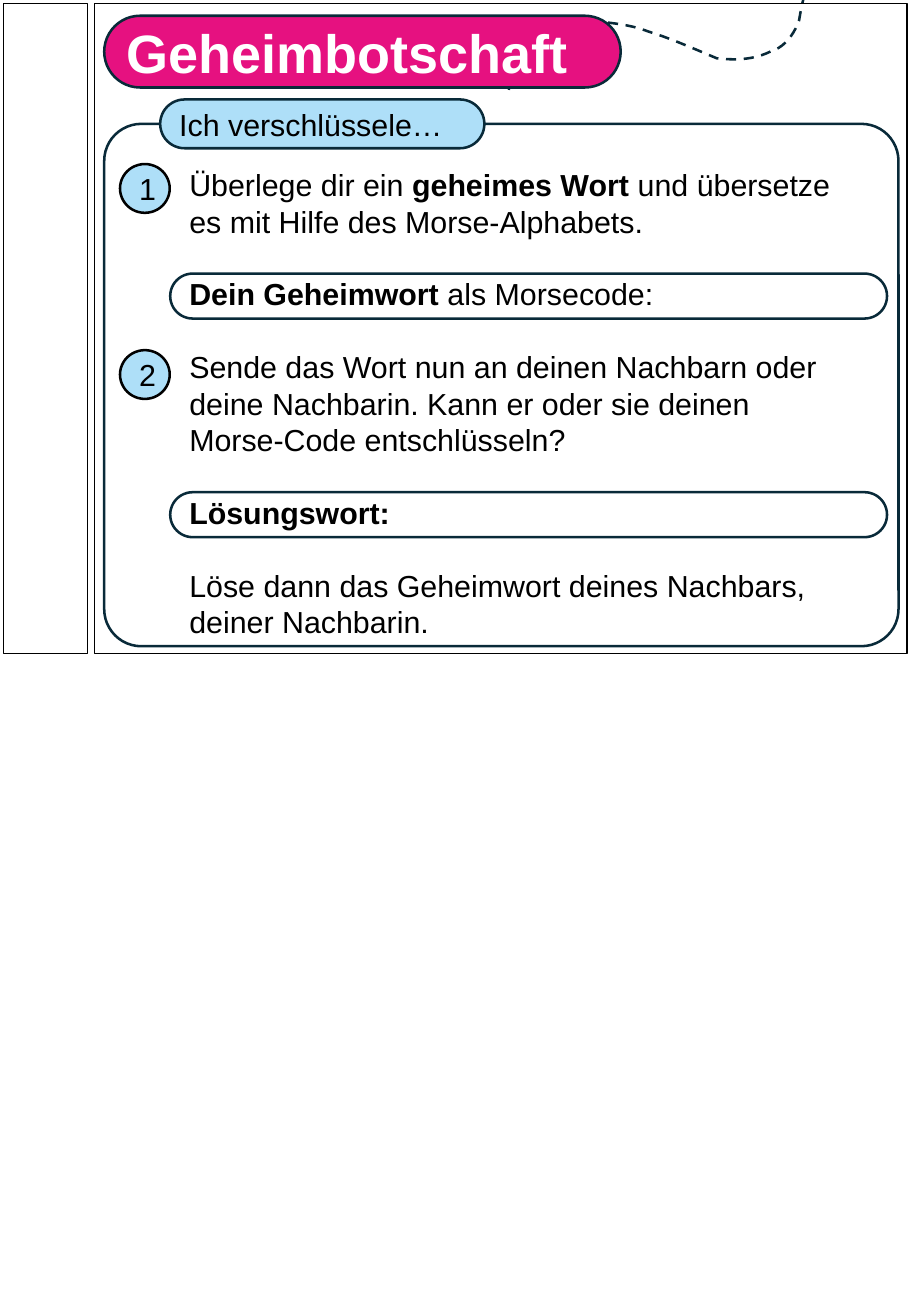
from dataclasses import dataclass

from pptx import Presentation
from pptx.dml.color import RGBColor as RGB
from pptx.enum.dml import MSO_LINE
from pptx.enum.shapes import MSO_SHAPE as SHAPE
from pptx.enum.text import MSO_ANCHOR as ANCHOR, MSO_AUTO_SIZE as AUTO, PP_ALIGN as ALIGN
from pptx.util import Cm, Pt


@dataclass(frozen=True)
class Theme:
    navy: RGB = RGB(0x09, 0x2A, 0x39)
    pink: RGB = RGB(0xE6, 0x11, 0x80)
    sky: RGB = RGB(0xAE, 0xDF, 0xF8)
    white: RGB = RGB(0xFF, 0xFF, 0xFF)
    black: RGB = RGB(0, 0, 0)
    font: str = "Arial"
    title: Pt = Pt(32)
    body: Pt = Pt(18)
    line_height: Pt = Pt(21.6)
    outline: Pt = Pt(1.5)
    hairline: Pt = Pt(0.75)


T = Theme()


def style(sp, fill=None, line=T.navy, width=T.outline):
    sp.shadow.inherit = False
    if fill is None:
        sp.fill.background()
    else:
        sp.fill.solid()
        sp.fill.fore_color.rgb = fill
    sp.line.color.rgb = line
    sp.line.width = width


def add_run(p, text, color=T.black, **fmt):
    r = p.add_run()
    r.text = text
    r.font.color.rgb = color
    for name, value in ({"name": T.font, "size": T.body, "bold": False} | fmt).items():
        setattr(r.font, name, value)


prs = Presentation()
prs.slide_width, prs.slide_height = Cm(19.05), Cm(27.51)
s = prs.slides.add_slide(prs.slide_layouts[6])

# Card and answer fields: box, corner, fill
for box, corner, fill in [
    ((2.18, 2.59, 16.61, 10.92), 0.071, T.white),
    ((3.56, 10.29, 14.99, 0.94), 0.5, None),
    ((3.56, 5.72, 14.99, 0.94), 0.5, None),
]:
    sp = s.shapes.add_shape(SHAPE.ROUNDED_RECTANGLE, *map(Cm, box))
    sp.adjustments[0] = corner
    style(sp, fill)

# Dashed trail: Bézier segments (two handles and an end point), sampled evenly
STEPS = 10
start = (10.64, 1.88)
trail = [
    ((10.72, 1.42), (10.95, 0.86), (11.18, 0.64)),
    ((11.43, 0.38), (11.68, 0.43), (12.07, 0.41)),
    ((12.42, 0.46), (13.06, 0.46), (13.56, 0.66)),
    ((14.05, 0.81), (14.63, 1.07), (14.99, 1.22)),
    ((15.42, 1.27), (15.8, 1.24), (16.13, 1.07)),
    ((16.41, 0.99), (16.61, 0.71), (16.71, 0.43)),
    ((16.76, 0.15), (16.81, -0.2), (17.02, -0.53)),
    ((17.15, -0.79), (17.58, -1.24), (17.96, -1.5)),
]
builder = s.shapes.build_freeform(*map(Cm, start))
points = []
for a, b, end in trail:
    for i in range(1, STEPS + 1):
        t = i / STEPS
        weights = ((1 - t) ** 3, 3 * t * (1 - t) ** 2, 3 * t**2 * (1 - t), t**3)
        points.append([
            Cm(sum(w * v for w, v in zip(weights, axis)))
            for axis in zip(start, a, b, end)
        ])
    start = end
builder.add_line_segments(points, close=False)
sp = builder.convert_to_shape()
style(sp)
sp.line.dash_style = MSO_LINE.DASH

# Title and heading pills, numbered circles
pill, circle = SHAPE.ROUNDED_RECTANGLE, SHAPE.OVAL
for kind, box, fill, line, text, color, fmt in [
    (pill, (2.18, 0.33, 10.8, 1.5), T.pink, T.navy, "Geheimbotschaft", T.white,
     {"size": T.title, "bold": True}),
    (pill, (3.35, 2.08, 6.78, 1.02), T.sky, T.navy, "Ich verschlüssele…", T.black, {}),
    (circle, (2.51, 3.43, 1.04, 1.02), T.sky, T.black, "1", T.black, {}),
    (circle, (2.51, 7.32, 1.04, 1.02), T.sky, T.black, "2", T.black, {}),
]:
    sp = s.shapes.add_shape(kind, *map(Cm, box))
    style(sp, fill, line)
    if kind == pill:
        sp.adjustments[0] = 0.5
    tf = sp.text_frame
    tf.word_wrap, tf.vertical_anchor = True, ANCHOR.MIDDLE
    p = tf.paragraphs[0]
    p.alignment = ALIGN.CENTER if kind == circle else ALIGN.LEFT
    add_run(p, text, color, **fmt)

# Page frames
for left, width in [(0.08, 1.75), (1.98, 16.99)]:
    sp = s.shapes.add_shape(SHAPE.RECTANGLE, Cm(left), Cm(0.08), Cm(width), Cm(13.59))
    style(sp, line=T.black, width=T.hairline)

# Instructions: runs of (text, bold), one line of space between paragraphs
instructions = [
    [("Überlege dir ein ", False), ("geheimes Wort ", True),
     ("und übersetze es mit Hilfe des Morse-Alphabets.", False)],
    [("Dein Geheimwort ", True), ("als Morsecode:", False)],
    [("Sende das Wort nun an deinen Nachbarn oder deine Nachbarin. "
      "Kann er oder sie deinen Morse-Code entschlüsseln?", False)],
    [("Lösungswort:", True)],
    [("Löse dann das Geheimwort deines Nachbars, deiner Nachbarin.", False)],
]
tf = s.shapes.add_textbox(Cm(3.71), Cm(3.35), Cm(14.17), Cm(11.02)).text_frame
tf.word_wrap, tf.auto_size = True, AUTO.SHAPE_TO_FIT_TEXT
for i, runs in enumerate(instructions):
    p = tf.add_paragraph() if i else tf.paragraphs[0]
    p.line_spacing = T.line_height
    if i:
        p.space_before = T.line_height
    for text, bold in runs:
        add_run(p, text, bold=bold)

prs.save("out.pptx")
